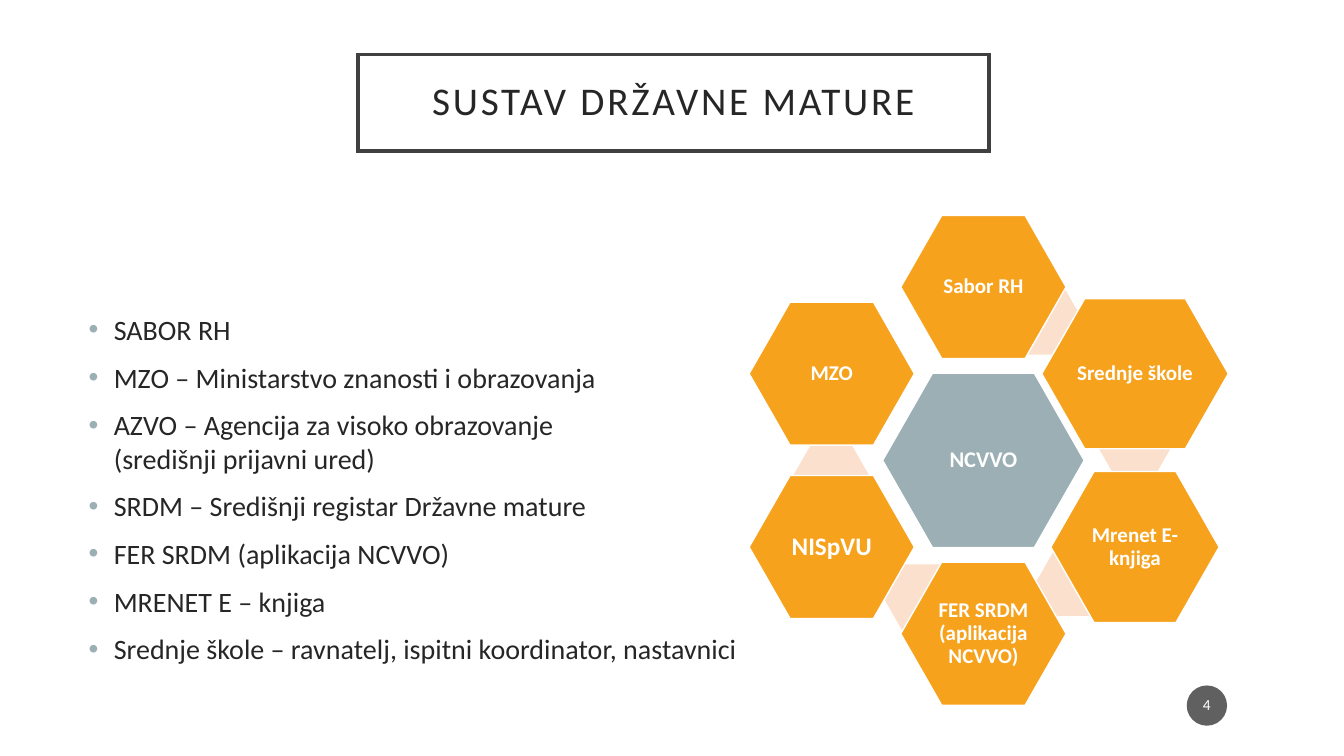
import math

import pptx
import pptx.dml.color
import pptx.enum.shapes
import pptx.enum.text
import pptx.oxml.ns
import pptx.util
from lxml import etree

SHAPE = pptx.enum.shapes.MSO_SHAPE
ANCHOR = pptx.enum.text.MSO_ANCHOR
ALIGN = pptx.enum.text.PP_ALIGN

ORANGE, PEACH, GREY_BLUE = "F6A21D", "FBE0CD", "9BAFB5"
INK, FRAME, BADGE, WHITE = "262626", "404040", "1D1D1D", "FFFFFF"

INSTITUTIONS = [
    "SABOR RH",
    "MZO – Ministarstvo znanosti i obrazovanja",
    "AZVO – Agencija za visoko obrazovanje\v(središnji prijavni ured)",
    "SRDM – Središnji registar Državne mature",
    "FER SRDM (aplikacija NCVVO)",
    "MRENET E – knjiga",
    "Srednje škole – ravnatelj, ispitni koordinator, nastavnici",
]
HUB = (73.17, 60.9)
RING_RADII = (13.03, 22.93)
PETAL = (12.3, 18.93)
# Clockwise from the top: label, size, font size
PETALS = [
    ("Sabor RH", PETAL, 15),
    ("Srednje škole", (13.88, 19.87), 15),
    ("Mrenet E-\vknjiga", (12.53, 20), 15),
    ("FER SRDM\v(aplikacija\vNCVVO)", PETAL, 15),
    ("NISpVU", PETAL, 18),
    ("MZO", PETAL, 15),
]
LINK_CENTRES = [(77.83, 42.6), (84.43, 58.87), (79.86, 77.13), (68.53, 79), (61.85, 62.87)]


def colour(hex_string):
    return pptx.dml.color.RGBColor.from_string(hex_string)


def add_child(parent, tag, **attributes):
    return etree.SubElement(parent, pptx.oxml.ns.qn(tag), **attributes)


class SlideBuilder:
    """Holds the style and the slide; lengths are percentages of the slide's size."""

    font_name = "Calibri"

    def __init__(self, presentation):
        self.width = presentation.slide_width
        self.height = presentation.slide_height
        self.slide = presentation.slides.add_slide(presentation.slide_layouts[5])

    def box(self, left, top, width, height):
        return (int(self.width * left / 100), int(self.height * top / 100),
                int(self.width * width / 100), int(self.height * height / 100))

    def style(self, paragraph, size, ink, bold=False, align=ALIGN.CENTER):
        paragraph.alignment = align
        font = paragraph.font
        font.name, font.size, font.bold = self.font_name, pptx.util.Pt(size), bold
        font.color.rgb = colour(ink)

    def title(self, text, box):
        title = self.slide.shapes.title
        title.left, title.top, title.width, title.height = self.box(*box)
        title.fill.solid()
        title.fill.fore_color.rgb = colour(WHITE)
        title.line.color.rgb = colour(FRAME)
        title.line.width = pptx.util.Pt(2.5)
        add_child(title._element.spPr.find(pptx.oxml.ns.qn("a:ln")), "a:miter", lim="800000")
        frame = title.text_frame
        frame.text = text
        frame.vertical_anchor = ANCHOR.MIDDLE
        paragraph = frame.paragraphs[0]
        paragraph.line_spacing = 0.9
        self.style(paragraph, 28, INK)
        paragraph.runs[0]._r.get_or_add_rPr().set("spc", "200")

    def bullets(self, items, box):
        frame = self.slide.shapes.add_textbox(*self.box(*box)).text_frame
        frame.word_wrap = True
        frame.margin_top = pptx.util.Inches(0.49)
        frame.text = "\n".join(items)
        indent = pptx.util.Inches(0.25)
        for number, paragraph in enumerate(frame.paragraphs):
            self.style(paragraph, 20, INK, align=ALIGN.LEFT)
            paragraph.space_before = pptx.util.Pt(10 if number else 0)
            properties = paragraph._p.get_or_add_pPr()
            properties.set("marL", str(indent))
            properties.set("indent", str(-indent))
            default_run = properties.find(pptx.oxml.ns.qn("a:defRPr"))
            bullet_colour = add_child(properties, "a:buClr")
            add_child(bullet_colour, "a:srgbClr", val=GREY_BLUE)
            add_child(properties, "a:buFont", typeface="Arial")
            add_child(properties, "a:buChar", char="•")
            properties.append(default_run)

    def figure(self, kind, centre, size, fill, outline=None):
        """Add a preset shape placed by its centre."""
        left, top = (c - s / 2 for c, s in zip(centre, size))
        figure = self.slide.shapes.add_shape(kind, *self.box(left, top, *size))
        figure.shadow.inherit = False
        figure.fill.solid()
        figure.fill.fore_color.rgb = colour(fill)
        if outline:
            figure.line.color.rgb = colour(outline)
            figure.line.width = pptx.util.Pt(1)
        else:
            figure.line.fill.background()
        return figure

    def label(self, figure, text, size, bold=True):
        frame = figure.text_frame
        frame.word_wrap = False
        frame.vertical_anchor = ANCHOR.MIDDLE
        frame.margin_left = frame.margin_right = pptx.util.Inches(0.02)
        frame.margin_top = frame.margin_bottom = pptx.util.Inches(0.02)
        frame.text = text
        paragraph = frame.paragraphs[0]
        paragraph.line_spacing = 0.9
        self.style(paragraph, size, WHITE, bold)

    def hexagon(self, centre, size, fill, text="", font_size=15):
        hexagon = self.figure(SHAPE.HEXAGON, centre, size, fill, WHITE if text else None)
        hexagon.adjustments[0] = 0.286
        if text:
            self.label(hexagon, text, font_size)

    def page_badge(self, number, centre, size):
        badge = self.figure(SHAPE.OVAL, centre, size, BADGE)
        fill = badge._element.spPr.find(pptx.oxml.ns.qn("a:solidFill"))
        add_child(fill[0], "a:alpha", val="70000")
        self.label(badge, number, 11, bold=False)


def main():
    presentation = pptx.Presentation()
    presentation.slide_width = pptx.util.Inches(13.33)
    presentation.slide_height = pptx.util.Inches(7.5)
    builder = SlideBuilder(presentation)

    builder.title("SUSTAV DRŽAVNE MATURE", (26.63, 7.2, 46.96, 12.8))
    builder.bullets(INSTITUTIONS, (5.85, 34.8, 50.26, 56.8))

    builder.hexagon(HUB, (15, 23.07), GREY_BLUE, "NCVVO", 16)
    for link_centre in LINK_CENTRES:
        builder.hexagon(link_centre, (5.63, 8.67), PEACH)
    for position, (name, size, font_size) in enumerate(PETALS):
        angle = math.radians(60 * position)
        centre = (HUB[0] + RING_RADII[0] * math.sin(angle),
                  HUB[1] - RING_RADII[1] * math.cos(angle))
        builder.hexagon(centre, size, ORANGE, name, font_size)

    builder.page_badge("4", (89.8, 93.33), (3, 5.33))
    presentation.save("out.pptx")


if __name__ == "__main__":
    main()
